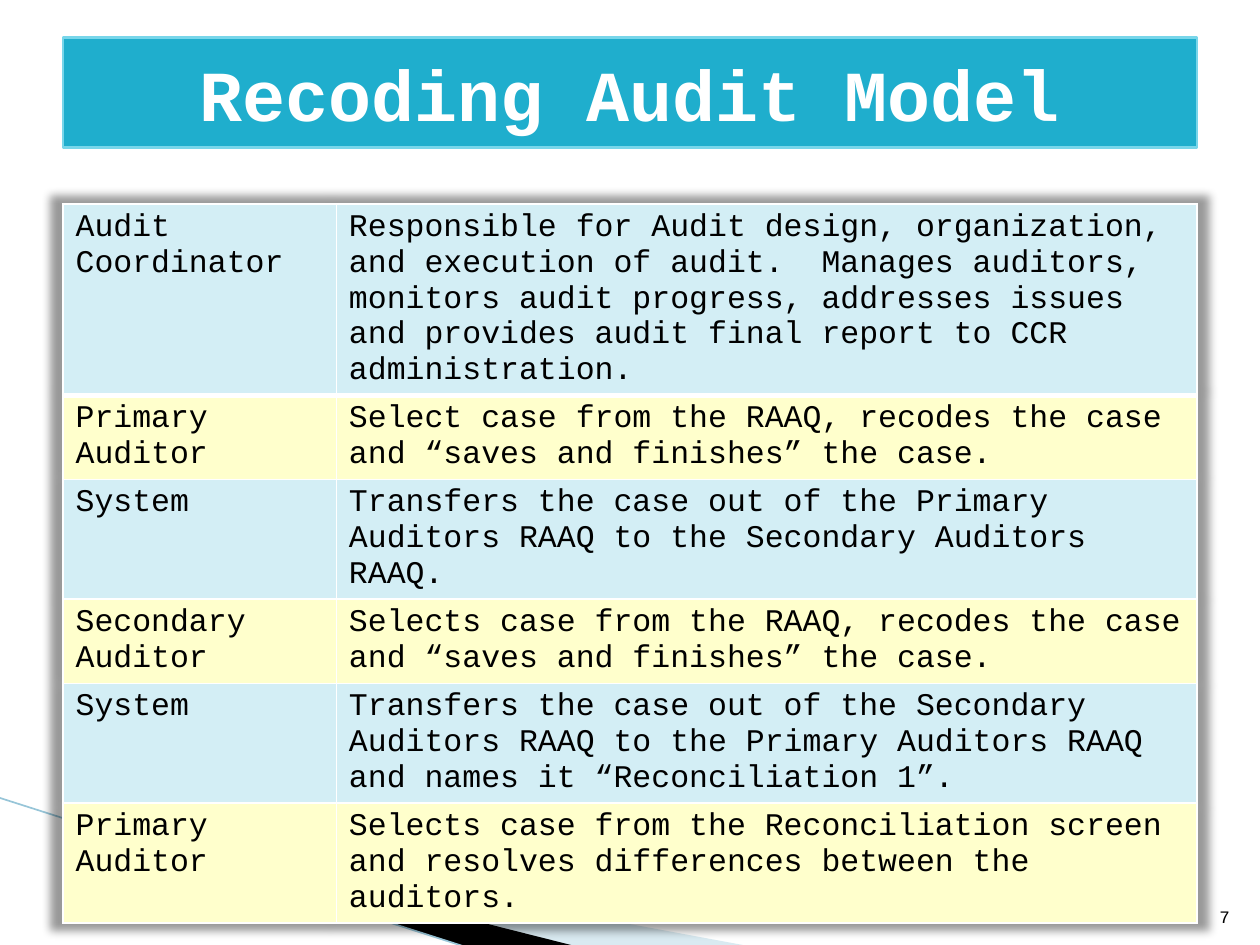
from lxml import etree
from pptx import Presentation
from pptx.dml.color import RGBColor
from pptx.enum.shapes import MSO_CONNECTOR
from pptx.enum.text import MSO_ANCHOR, PP_ALIGN
from pptx.oxml import parse_xml
from pptx.oxml.ns import qn
from pptx.util import Inches, Pt

STRAIGHT = MSO_CONNECTOR.STRAIGHT
MIDDLE, BOTTOM = MSO_ANCHOR.MIDDLE, MSO_ANCHOR.BOTTOM
CENTER, RIGHT = PP_ALIGN.CENTER, PP_ALIGN.RIGHT

# Content
TITLE = "Recoding Audit Model"
PAGE = "7"
ROLES = [
    ("Audit Coordinator",
     "Responsible for Audit design, organization, and execution of audit.  "
     "Manages auditors, monitors audit progress, addresses issues and "
     "provides audit final report to CCR administration."),
    ("Primary Auditor",
     "Select case from the RAAQ, recodes the case and “saves and finishes” the case."),
    ("System",
     "Transfers the case out of the Primary Auditors RAAQ to the Secondary Auditors RAAQ."),
    ("Secondary Auditor",
     "Selects case from the RAAQ, recodes the case and “saves and finishes” the case."),
    ("System",
     "Transfers the case out of the Secondary Auditors RAAQ to the Primary "
     "Auditors RAAQ and names it “Reconciliation 1”."),
    ("Primary Auditor",
     "Selects case from the Reconciliation screen and resolves differences "
     "between the auditors."),
]

# Style
FONT = "Courier New"
BLACK, WHITE = RGBColor(0, 0, 0), RGBColor(255, 255, 255)
TEAL, TEAL_EDGE = RGBColor(0x1F, 0xAE, 0xCD), RGBColor(0x78, 0xD6, 0xEA)
PALE_BLUE, CREAM = RGBColor(0xD3, 0xEE, 0xF5), RGBColor(0xFF, 0xFF, 0xCC)
MIST, STREAK = RGBColor(0xA0, 0xCB, 0xDC), RGBColor(0x97, 0xC5, 0xD8)
A_NS = 'xmlns:a="http://schemas.openxmlformats.org/drawingml/2006/main"'

# Layout, in inches
W, H, MARGIN = 10, 7.5, 0.5
BODY_W = W - 2 * MARGIN
COLS = (2.17, BODY_W - 2.17)
ROW_H = 0.41
WEDGES = [
    ([(0.55, 6.51), (5.95, 7.51), (4.56, 7.51), (0.55, 6.5)], MIST, 40),
    ([(0.53, 6.49), (4.57, 7.51), (3.72, 7.52), (0.54, 6.5)], BLACK, 100),
]


def add_text(tf, text, size, color, bold=False, align=None):
    p = tf.paragraphs[0]
    if align is not None:
        p.alignment = align
    r = p.add_run()
    r.text = text
    r.font.name, r.font.size, r.font.bold = FONT, Pt(size), bold
    r.font.color.rgb = color


def add_wedge(s, points, color, alpha):
    builder = s.shapes.build_freeform(*map(Inches, points[0]))
    builder.add_line_segments([(Inches(x), Inches(y)) for x, y in points[1:]])
    sp = builder.convert_to_shape()
    sp.shadow.inherit = False
    sp.line.fill.background()
    sp.fill.solid()
    sp.fill.fore_color.rgb = color
    if alpha < 100:
        clr = sp.fill._xPr.find(qn("a:solidFill"))[0]
        etree.SubElement(clr, qn("a:alpha")).set("val", str(alpha * 1000))


def add_borders(cell, top, bottom):
    tcPr = cell._tc.get_or_add_tcPr()
    for side, width in (("L", 1), ("R", 1), ("T", top), ("B", bottom)):
        tcPr.append(parse_xml(
            f'<a:ln{side} {A_NS} w="{Pt(width)}"><a:solidFill>'
            f'<a:srgbClr val="{WHITE}"/></a:solidFill></a:ln{side}>'))


prs = Presentation()
prs.slide_width, prs.slide_height = Inches(W), Inches(H)
s = prs.slides.add_slide(prs.slide_layouts[5])

# Corner decoration
for wedge in WEDGES:
    add_wedge(s, *wedge)
streak = s.shapes.add_connector(
    STRAIGHT, Inches(-0.01), Inches(6.33), Inches(3.71), Inches(7.52))
streak.line.color.rgb, streak.line.width = STREAK, Pt(0.95)
etree.SubElement(streak._element.spPr, qn("a:effectLst"))

# Roles table: rows grow to fit their text
frame = s.shapes.add_table(len(ROLES), len(COLS), Inches(MARGIN), Inches(1.62),
                           Inches(BODY_W), Inches(ROW_H * len(ROLES)))
table = frame.table
table.first_row = table.horz_banding = False
for column, width in zip(table.columns, COLS):
    column.width = Inches(width)
for i, role in enumerate(ROLES):
    table.rows[i].height = Inches(ROW_H)
    for j, text in enumerate(role):
        cell = table.cell(i, j)
        add_borders(cell, 3 if i == 1 else 1, 3 if i == 0 else 1)
        cell.fill.solid()
        cell.fill.fore_color.rgb = CREAM if i % 2 else PALE_BLUE
        add_text(cell.text_frame, text, 18, BLACK)
frame.height = Inches(5.1)

# Soft shadow all round the table
table._tbl.tblPr.insert(0, parse_xml(
    f'<a:effectLst {A_NS}><a:outerShdw blurRad="63500" sx="102000" sy="102000" '
    'algn="ctr" rotWithShape="0"><a:prstClr val="black"><a:alpha val="40000"/>'
    '</a:prstClr></a:outerShdw></a:effectLst>'))

# Page number
box = s.shapes.add_textbox(Inches(9.46), Inches(7.01), Inches(0.4), Inches(0.4))
box.text_frame.word_wrap = True
box.text_frame.vertical_anchor = BOTTOM
add_text(box.text_frame, PAGE, 10, BLACK, align=RIGHT)

# Title bar, in front
title = s.shapes.title
title.left, title.top = Inches(MARGIN), Inches(0.3)
title.width, title.height = Inches(BODY_W), Inches(0.87)
title.fill.solid()
title.fill.fore_color.rgb = TEAL
title.line.color.rgb, title.line.width = TEAL_EDGE, Pt(1.5)
title.text_frame.vertical_anchor = MIDDLE
add_text(title.text_frame, TITLE, 41, WHITE, bold=True, align=CENTER)
s.shapes._spTree.append(title._element)

prs.save("out.pptx")
